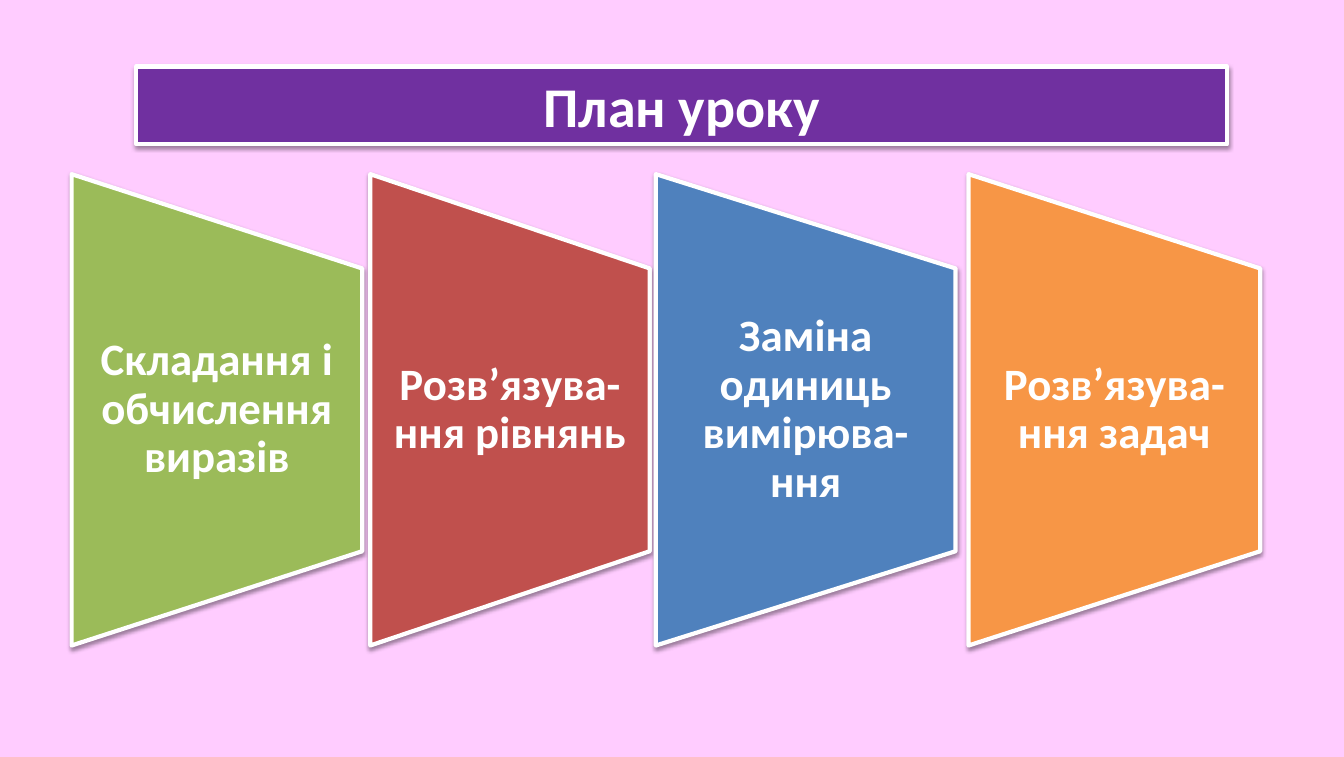
from dataclasses import dataclass

from lxml import etree
from pptx import Presentation
from pptx.dml.color import RGBColor
from pptx.enum.shapes import MSO_SHAPE
from pptx.enum.text import MSO_ANCHOR, MSO_AUTO_SIZE, PP_ALIGN
from pptx.oxml.ns import qn
from pptx.util import Inches, Pt

TRAPEZOID = MSO_SHAPE.FLOWCHART_MANUAL_OPERATION
MIDDLE = MSO_ANCHOR.MIDDLE
CENTER = PP_ALIGN.CENTER
NO_AUTOFIT = MSO_AUTO_SIZE.NONE
TITLE_ONLY = 5
SLIDE_WIDTH = Inches(13.32)
SLIDE_HEIGHT = Inches(7.5)


@dataclass(frozen=True)
class Theme:
    """Colours, font and sizes of the slide."""
    background: str = "FFCCFF"
    white: str = "FFFFFF"
    purple: str = "7030A0"
    green: str = "9BBB59"
    red: str = "C0504D"
    blue: str = "4F81BD"
    orange: str = "F79646"
    font: str = "Calibri"
    title_size: int = 40
    step_size: int = 32
    outline: int = 3


THEME = Theme()
STEPS = (
    (5.33, 21.62, THEME.green, "Складання і обчислення виразів"),
    (27.55, 20.8, THEME.red, "Розв’язува-ння рівнянь"),
    (48.8, 22.3, THEME.blue, "Заміна одиниць вимірюва-ння"),
    (72.07, 21.7, THEME.orange, "Розв’язува-ння задач"),
)
STEP_TOP = 23
STEP_HEIGHT = 62.27


def across(percent):
    """Return a share of the slide width."""
    return round(SLIDE_WIDTH * percent / 100)


def down(percent):
    """Return a share of the slide height."""
    return round(SLIDE_HEIGHT * percent / 100)


def write_text(shape, text, size, line_spacing=1.0, side_inset=0.1, edge_inset=0.05):
    """Put bold, centred, white text into a shape."""
    frame = shape.text_frame
    frame.word_wrap = True
    frame.auto_size = NO_AUTOFIT
    frame.vertical_anchor = MIDDLE
    frame.margin_left = frame.margin_right = Inches(side_inset)
    frame.margin_top = frame.margin_bottom = Inches(edge_inset)
    paragraph = frame.paragraphs[0]
    paragraph.alignment = CENTER
    paragraph.line_spacing = line_spacing
    run = paragraph.add_run()
    run.text = text
    run.font.name = THEME.font
    run.font.size = Pt(size)
    run.font.bold = True
    run.font.color.rgb = RGBColor.from_string(THEME.white)


def style_panel(shape, colour):
    """Give a shape its fill, white outline and soft shadow."""
    shape.fill.solid()
    shape.fill.fore_color.rgb = RGBColor.from_string(colour)
    shape.line.color.rgb = RGBColor.from_string(THEME.white)
    shape.line.width = Pt(THEME.outline)
    shape.shadow.inherit = False
    effects = shape._element.spPr.find(qn("a:effectLst"))
    shadow = etree.SubElement(effects, qn("a:outerShdw"), blurRad="40000",
                              dist="20000", dir="5400000", rotWithShape="0")
    colour_element = etree.SubElement(shadow, qn("a:srgbClr"), val="000000")
    etree.SubElement(colour_element, qn("a:alpha"), val="38000")


def add_title(slide, text):
    """Turn the title placeholder into the heading banner."""
    title = slide.shapes.title
    title.left, title.top = across(10.14), down(8.8)
    title.width, title.height = across(81.16), down(10.27)
    style_panel(title, THEME.purple)
    write_text(title, text, THEME.title_size)


def add_step(slide, left_share, width_share, colour, text):
    """Add a trapezoid turned on its side with its label."""
    left, width = across(left_share), across(width_share)
    top, height = down(STEP_TOP), down(STEP_HEIGHT)
    shift = (height - width) // 2
    group = slide.shapes.add_group_shape()
    panel = group.shapes.add_shape(TRAPEZOID, left - shift, top + shift, height, width)
    panel.rotation = 270
    style_panel(panel, colour)
    label = group.shapes.add_textbox(left, top + height // 5, width, height * 3 // 5)
    write_text(label, text, THEME.step_size, line_spacing=0.9,
               side_inset=0.22, edge_inset=0)


def main():
    """Build and save the lesson plan slide."""
    presentation = Presentation()
    presentation.slide_width = SLIDE_WIDTH
    presentation.slide_height = SLIDE_HEIGHT
    slide = presentation.slides.add_slide(presentation.slide_layouts[TITLE_ONLY])
    slide.background.fill.solid()
    slide.background.fill.fore_color.rgb = RGBColor.from_string(THEME.background)
    add_title(slide, "План уроку")
    for step in STEPS:
        add_step(slide, *step)
    presentation.save("out.pptx")


if __name__ == "__main__":
    main()
